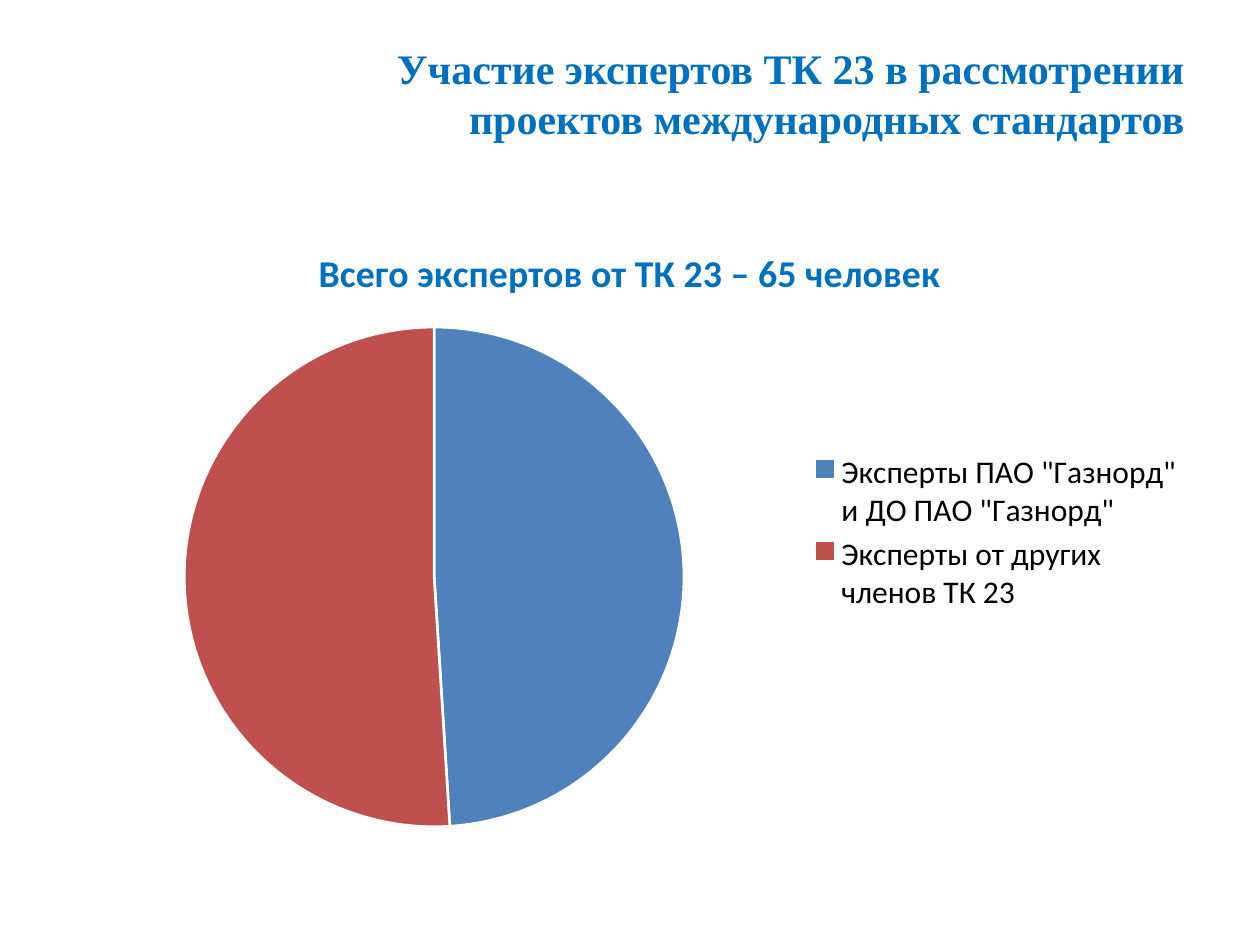
import pptx
import pptx.chart.data
import pptx.dml.color
import pptx.enum.chart
import pptx.enum.text
import pptx.util


def color(value):
    """Turn a hex string into a colour."""
    return pptx.dml.color.RGBColor.from_string(value)


class Composer:
    """Holds the style and the current slide and adds each kind of element."""

    accent = "0070C0"
    title_font = "Times New Roman"
    chart_font = "Calibri"

    def __init__(self, deck):
        """Add a title-only slide to the deck."""
        self.deck = deck
        self.slide = deck.slides.add_slide(deck.slide_layouts[5])

    def area(self, left, top, width, height):
        """Turn shares of the slide's size into lengths."""
        across, down = self.deck.slide_width, self.deck.slide_height
        return [round(share * size) for share, size in
                zip((left, top, width, height), (across, down, across, down))]

    def style(self, font, name, size, hue, bold=False):
        """Format a font."""
        font.name, font.size, font.bold = name, pptx.util.Pt(size), bold
        font.color.rgb = color(hue)

    def title(self, text, area):
        """Place the right-aligned title, raised one line above the middle."""
        box = self.slide.shapes.title
        box.left, box.top, box.width, box.height = self.area(*area)
        frame = box.text_frame
        frame.text = text
        frame.vertical_anchor = pptx.enum.text.MSO_ANCHOR.MIDDLE
        frame.margin_bottom = pptx.util.Inches(0.43)
        para = frame.paragraphs[0]
        para.alignment = pptx.enum.text.PP_ALIGN.RIGHT
        for span in para.runs:
            self.style(span.font, self.title_font, 24, self.accent, True)

    def pie(self, heading, slices, area):
        """Add a pie chart from (label, value, colour) slices."""
        labels, values, hues = zip(*slices)
        data = pptx.chart.data.CategoryChartData()
        data.categories = labels
        data.add_series("Эксперты", values)
        chart = self.slide.shapes.add_chart(
            pptx.enum.chart.XL_CHART_TYPE.PIE, *self.area(*area), data).chart
        self.style(chart.font, self.chart_font, 18, "000000")
        chart.has_title = True
        frame = chart.chart_title.text_frame
        frame.text = heading
        self.style(frame.paragraphs[0].runs[0].font, self.chart_font, 21.6,
                   self.accent, True)
        chart.chart_title.include_in_layout = False
        chart.has_legend = True
        chart.legend.position = pptx.enum.chart.XL_LEGEND_POSITION.RIGHT
        chart.legend.include_in_layout = False
        self.style(chart.legend.font, self.chart_font, 18, "000000")
        plot = chart.plots[0]
        plot.vary_by_categories = True
        for index, hue in enumerate(hues):
            look = plot.series[0].points[index].format
            look.fill.solid()
            look.fill.fore_color.rgb = color(hue)
            look.line.color.rgb = color("FFFFFF")
            look.line.width = pptx.util.Pt(1.5)


def main():
    """Build and save the slide."""
    deck = pptx.Presentation()
    deck.slide_width = pptx.util.Inches(10)
    deck.slide_height = pptx.util.Inches(7.5)
    composer = Composer(deck)
    composer.title("Участие экспертов ТК 23 в рассмотрении\v"
                   "проектов международных стандартов",
                   (0.05, 0.04, 0.9, 1 / 6))
    composer.pie("Всего экспертов от ТК 23 – 65 человек",
                 [('Эксперты ПАО "Газнорд" и ДО ПАО "Газнорд"', 49, "4F81BD"),
                  ("Эксперты от других членов ТК 23", 51, "C0504D")],
                 (0.05, 7 / 30, 0.9, 0.66))
    deck.save("out.pptx")


if __name__ == "__main__":
    main()
